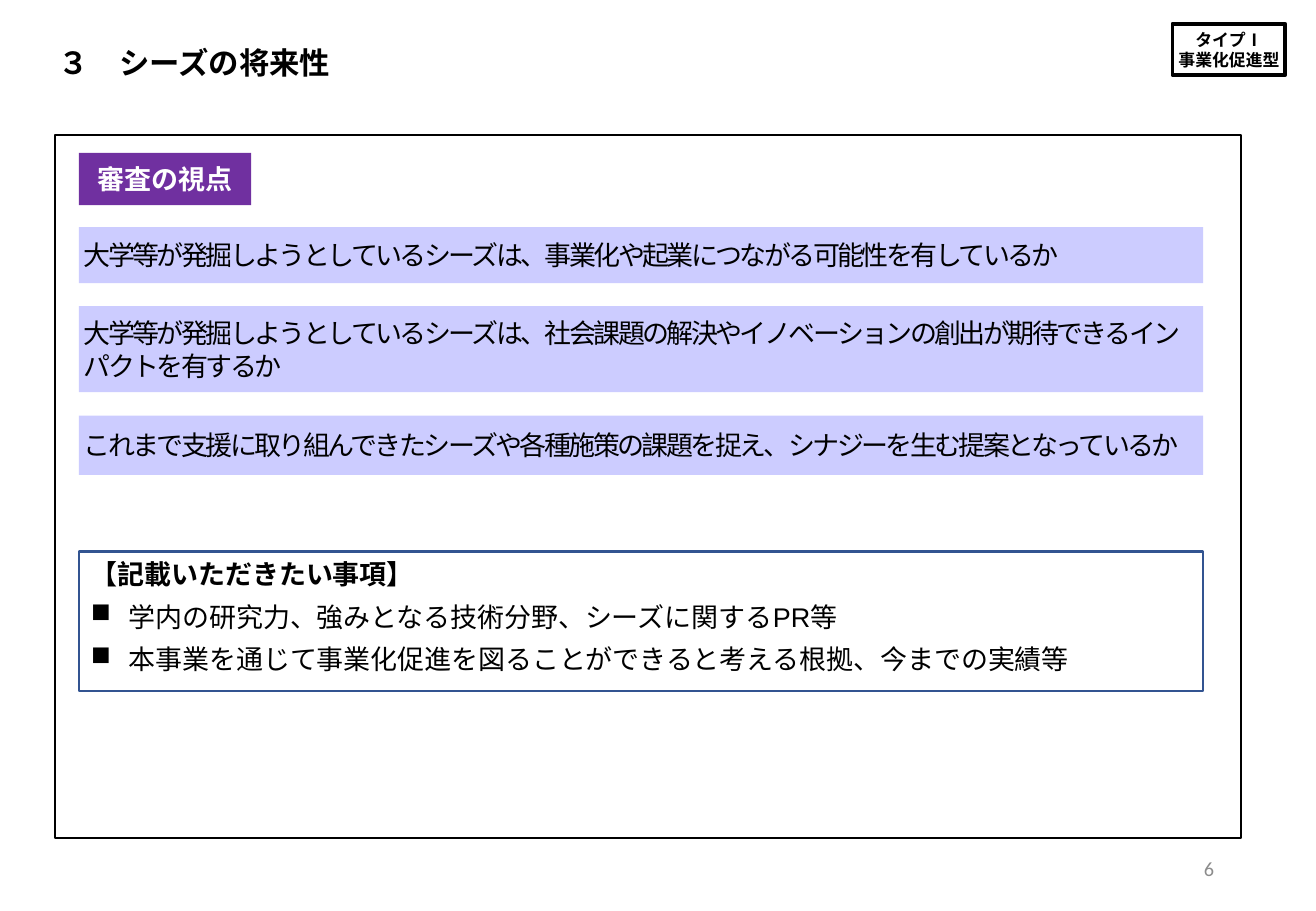
"""Build the slide on the future potential of research seeds."""
import dataclasses
import typing

import pptx
import pptx.chart
import pptx.dml.color
import pptx.enum.shapes
import pptx.enum.text
import pptx.oxml
import pptx.oxml.ns
import pptx.util

Cm = pptx.util.Cm
Pt = pptx.util.Pt
Align = pptx.enum.text.PP_ALIGN
Anchor = pptx.enum.text.MSO_ANCHOR


@dataclasses.dataclass(frozen=True)
class Theme:
    """Hold the colours, fonts and type sizes."""
    black: str = "000000"
    white: str = "FFFFFF"
    grey: str = "8C8C8C"
    purple: str = "7030A0"
    lilac: str = "CCCCFF"
    blue: str = "325491"
    sans: str = "Arial"
    head: str = "Calibri"
    asian: str = "Noto Sans CJK JP"
    small: float = 10
    number: float = 12
    body: float = 16
    title: float = 18


THEME = Theme()


@dataclasses.dataclass(frozen=True)
class Style:
    """Describe how a run looks."""
    size: float = THEME.body
    font: str = THEME.sans
    color: str = THEME.black
    bold: bool = False
    track: int = 0


@dataclasses.dataclass(frozen=True)
class Line:
    """Describe one paragraph."""
    text: str
    style: Style
    align: Align = Align.LEFT
    before: float = 0
    bullet: str = ""


@dataclasses.dataclass(frozen=True)
class Box:
    """Describe one box in centimetres, with its text."""
    left: float
    top: float
    width: float
    height: float
    lines: tuple[Line, ...] = ()
    fill: typing.Optional[str] = None
    edge: typing.Optional[str] = None
    weight: float = 1
    anchor: Anchor = Anchor.MIDDLE
    inset: tuple[float, float] = (0.1, 0.1)
    wrap: bool = True


LEFT, WIDTH = 1.65, 23.5
BAR = Style(font=THEME.asian, track=-150)
STRONG = Style(bold=True)
PLAIN = Style()
BADGE = Style(THEME.small, bold=True)
TITLE = Style(THEME.title, THEME.head, bold=True)
LABEL = Style(color=THEME.white, bold=True)
NUMBER = Style(THEME.number, THEME.head, THEME.grey)


def bar(top: float, height: float, text: str) -> Box:
    """Return a lilac bar for one review point."""
    return Box(LEFT, top, WIDTH, height, (Line(text, BAR),), THEME.lilac)


def item(text: str) -> Line:
    """Return a bulleted line."""
    return Line(text, PLAIN, before=6, bullet="■")


BOXES = (
    Box(24.51, 0.5, 2.36, 1.07,
        (Line("タイプⅠ", BADGE, Align.CENTER),
         Line("事業化促進型", BADGE, Align.CENTER)),
        edge=THEME.black, weight=2.25, wrap=False),
    Box(1.12, 0.82, 15.32, 0.97, (Line("３　シーズの将来性", TITLE),)),
    Box(1.15, 2.82, 24.8, 14.7, fill=THEME.white, edge=THEME.black),
    Box(LEFT, 3.2, 3.6, 1.09, (Line("審査の視点", LABEL, Align.CENTER),),
        THEME.purple),
    bar(4.75, 1.17, "大学等が発掘しようとしているシーズは、"
        "事業化や起業につながる可能性を有しているか"),
    bar(6.4, 1.8, "大学等が発掘しようとしているシーズは、"
        "社会課題の解決やイノベーションの創出が期待できるインパクトを有するか"),
    bar(8.69, 1.24, "これまで支援に取り組んできたシーズや各種施策の課題を捉え、"
        "シナジーを生む提案となっているか"),
    Box(LEFT, 11.53, WIDTH, 2.92,
        (Line("【記載いただきたい事項】", STRONG),
         item("学内の研究力、強みとなる技術分野、シーズに関するPR等"),
         item("本事業を通じて事業化促進を図ることができると考える根拠、今までの実績等")),
        THEME.white, THEME.blue, 1.5, Anchor.TOP, (0.25, 0.13)),
    Box(19.43, 17.65, 6.2, 1.02, (Line("6", NUMBER, Align.RIGHT),),
        inset=(0.25, 0.13)),
)


def tint(text: str) -> pptx.dml.color.RGBColor:
    """Turn a hex string into a colour."""
    return pptx.dml.color.RGBColor.from_string(text)


def write(para: typing.Any, line: Line) -> None:
    """Fill a paragraph with its single run."""
    para.alignment = line.align
    para.space_before = Pt(line.before)
    if line.bullet:
        props = para._p.get_or_add_pPr()
        props.set("marL", str(Cm(0.79)))
        props.set("indent", str(-Cm(0.79)))
        mark = pptx.oxml.parse_xml(
            f'<a:buChar {pptx.oxml.ns.nsdecls("a")} char="{line.bullet}"/>')
        props.append(mark)
    run = para.add_run()
    run.text = line.text
    style = line.style
    font = run.font
    font.name, font.size, font.bold = style.font, Pt(style.size), style.bold
    font.color.rgb = tint(style.color)
    if style.track:
        font._element.set("spc", str(style.track))


def draw(slide: typing.Any, box: Box) -> None:
    """Draw a box and its text."""
    place = [Cm(n) for n in (box.left, box.top, box.width, box.height)]
    if box.fill or box.edge:
        kind = pptx.enum.shapes.MSO_SHAPE.RECTANGLE
        shape = slide.shapes.add_shape(kind, *place)
        shape.shadow.inherit = False
    else:
        shape = slide.shapes.add_textbox(*place)
    if box.fill:
        shape.fill.solid()
        shape.fill.fore_color.rgb = tint(box.fill)
    else:
        shape.fill.background()
    if box.edge:
        shape.line.color.rgb = tint(box.edge)
        shape.line.width = Pt(box.weight)
    else:
        shape.line.fill.background()
    frame = shape.text_frame
    frame.word_wrap = box.wrap
    frame.vertical_anchor = box.anchor
    side, end = (Cm(n) for n in box.inset)
    frame.margin_left = frame.margin_right = side
    frame.margin_top = frame.margin_bottom = end
    for index, line in enumerate(box.lines):
        para = frame.add_paragraph() if index else frame.paragraphs[0]
        write(para, line)


def main() -> None:
    """Build and save the deck."""
    deck = pptx.Presentation()
    deck.slide_width, deck.slide_height = Cm(27.51), Cm(19.05)
    slide = deck.slides.add_slide(deck.slide_layouts[6])
    for box in BOXES:
        draw(slide, box)
    deck.save("out.pptx")


if __name__ == "__main__":
    main()
